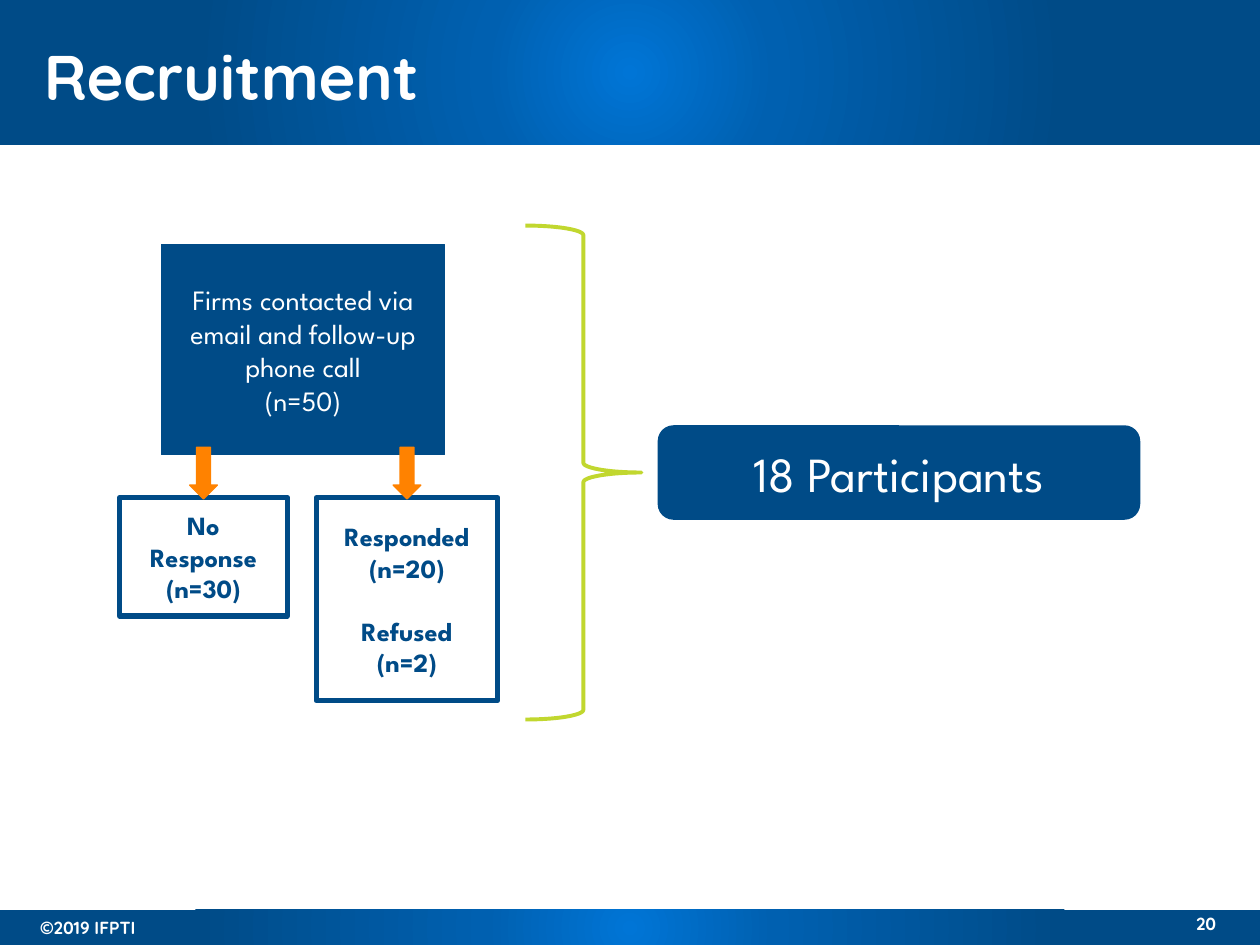
from collections import namedtuple

from lxml.etree import SubElement
from pptx import Presentation
from pptx.dml.color import RGBColor
from pptx.enum.shapes import MSO_SHAPE as SHAPE
from pptx.enum.text import MSO_ANCHOR as ANCHOR, PP_ALIGN as ALIGN
from pptx.oxml.ns import qn
from pptx.util import Inches, Pt

# The slide is a grid of 100 columns by 75 rows
COLUMNS, ROWS = 100, 75
CELL = Inches(0.1)
Box = namedtuple("Box", "left top width height")

NAVY, WHITE, ORANGE, LIME = "004B87", "FFFFFF", "FF8200", "C1D72F"
GLOW = [(0, "0075D6"), (23, "0060B0"), (69, NAVY), (97, NAVY)]
HEADING_FONT, BODY_FONT = "Quicksand", "League Spartan"


def color(value):
    return RGBColor.from_string(value)


def emu(box):
    return [round(cells * CELL) for cells in box]


def within(region, left, top, width, height):
    """Box given relative to the corner of its region."""
    return Box(region.left + left, region.top + top, width, height)


def write(shape, lines, font=BODY_FONT, size=16, ink=WHITE, bold=False,
          align=ALIGN.CENTER, anchor=ANCHOR.MIDDLE, gaps=None):
    """Write one paragraph per line; gaps maps a line number to space before."""
    frame = shape.text_frame
    frame.word_wrap = True
    frame.vertical_anchor = anchor
    for number, line in enumerate(lines):
        paragraph = frame.add_paragraph() if number else frame.paragraphs[0]
        paragraph.text = line
        paragraph.alignment = align
        paragraph.space_before = Pt((gaps or {}).get(number, 0))
        style = paragraph.font
        style.name, style.size, style.bold = font, Pt(size), bold
        style.color.rgb = color(ink)


def add_label(slide, box, text, **style):
    write(slide.shapes.add_textbox(*emu(box)), [text], font=HEADING_FONT,
          bold=True, **style)


def add_block(slide, kind, box, fill=None, line=None, weight=0.75):
    block = slide.shapes.add_shape(kind, *emu(box))
    block.shadow.inherit = False
    if fill:
        block.fill.solid()
        block.fill.fore_color.rgb = color(fill)
    else:
        block.fill.background()
    if line:
        block.line.color.rgb = color(line)
        block.line.width = Pt(weight)
    else:
        block.line.fill.background()
    return block


def add_band(slide, box):
    """Bar with a glow that spreads from its centre."""
    band = add_block(slide, SHAPE.RECTANGLE, box)
    band.fill.gradient()
    gradient = band.element.spPr.find(qn("a:gradFill"))
    for part in list(gradient):
        gradient.remove(part)
    stops = SubElement(gradient, qn("a:gsLst"))
    for position, value in GLOW:
        stop = SubElement(stops, qn("a:gs"), pos=str(position * 1000))
        SubElement(stop, qn("a:srgbClr"), val=value)
    circle = SubElement(gradient, qn("a:path"), path="circle")
    SubElement(circle, qn("a:fillToRect"),
               {side: "50000" for side in "ltrb"})


def add_header(slide, region, title):
    add_band(slide, region)
    add_label(slide, within(region, 2.5, 1.3, 93.2, 9.4), title, size=36,
              align=ALIGN.LEFT)


def add_footer(slide, region, copyright_line, page):
    add_band(slide, region)
    add_label(slide, within(region, 2.2, 0.1, 13.3, 2.7), copyright_line,
              size=10, align=ALIGN.LEFT, anchor=ANCHOR.TOP)
    add_label(slide, within(region, 87.9, -0.2, 9.6, 2.7), page,
              size=10, align=ALIGN.RIGHT, anchor=ANCHOR.TOP)


def add_flow(slide, region):
    # Contacted firms
    contacted = add_block(slide, SHAPE.RECTANGLE,
                          within(region, 3.3, 0, 22.5, 16.7), NAVY, NAVY)
    write(contacted, ["Firms contacted via email and follow-up phone call",
                      "(n=50)"])

    # Outcomes, each under an arrow at its middle
    outcomes_top, arrow_width, arrow_height = 20.1, 2.2, 4.1
    outcomes = [
        (0, 13.3, 9.4, ["No Response", "(n=30)"], None),
        (15.6, 14.4, 16.1,
         ["Responded", "(n=20)", "Refused", "(n=2)"], {2: 18}),
    ]
    for left, width, height, lines, gaps in outcomes:
        outcome = add_block(slide, SHAPE.RECTANGLE,
                            within(region, left, outcomes_top, width, height),
                            WHITE, NAVY, 3)
        write(outcome, lines, size=15, ink=NAVY, bold=True, gaps=gaps)
        arrow_left = left + (width - arrow_width) / 2
        add_block(slide, SHAPE.DOWN_ARROW,
                  within(region, arrow_left, outcomes_top - 4,
                         arrow_width, arrow_height), ORANGE, ORANGE)


def add_result(slide, region, text):
    """Brace over the full height, with the result at its point."""
    add_block(slide, SHAPE.RIGHT_BRACE,
              within(region, 0, 0, 9.2, region.height), line=LIME, weight=2.25)
    height = 7.5
    result = add_block(slide, SHAPE.ROUNDED_RECTANGLE,
                       within(region, 10.5, (region.height - height) / 2,
                              region.width - 10.5, height), NAVY)
    write(result, [text], size=28)


def main():
    deck = Presentation()
    deck.slide_width, deck.slide_height = COLUMNS * CELL, ROWS * CELL
    slide = deck.slides.add_slide(deck.slide_layouts[6])

    add_header(slide, Box(0, 0, COLUMNS, 11.5), "Recruitment")
    add_footer(slide, Box(0, 72.2, COLUMNS, 2.9), "©2019 IFPTI", "20")
    add_flow(slide, Box(9.5, 19.4, 30, 36.2))
    add_result(slide, Box(41.7, 17.9, 48.8, 39.2), "18 Participants")

    deck.save("out.pptx")


if __name__ == "__main__":
    main()
